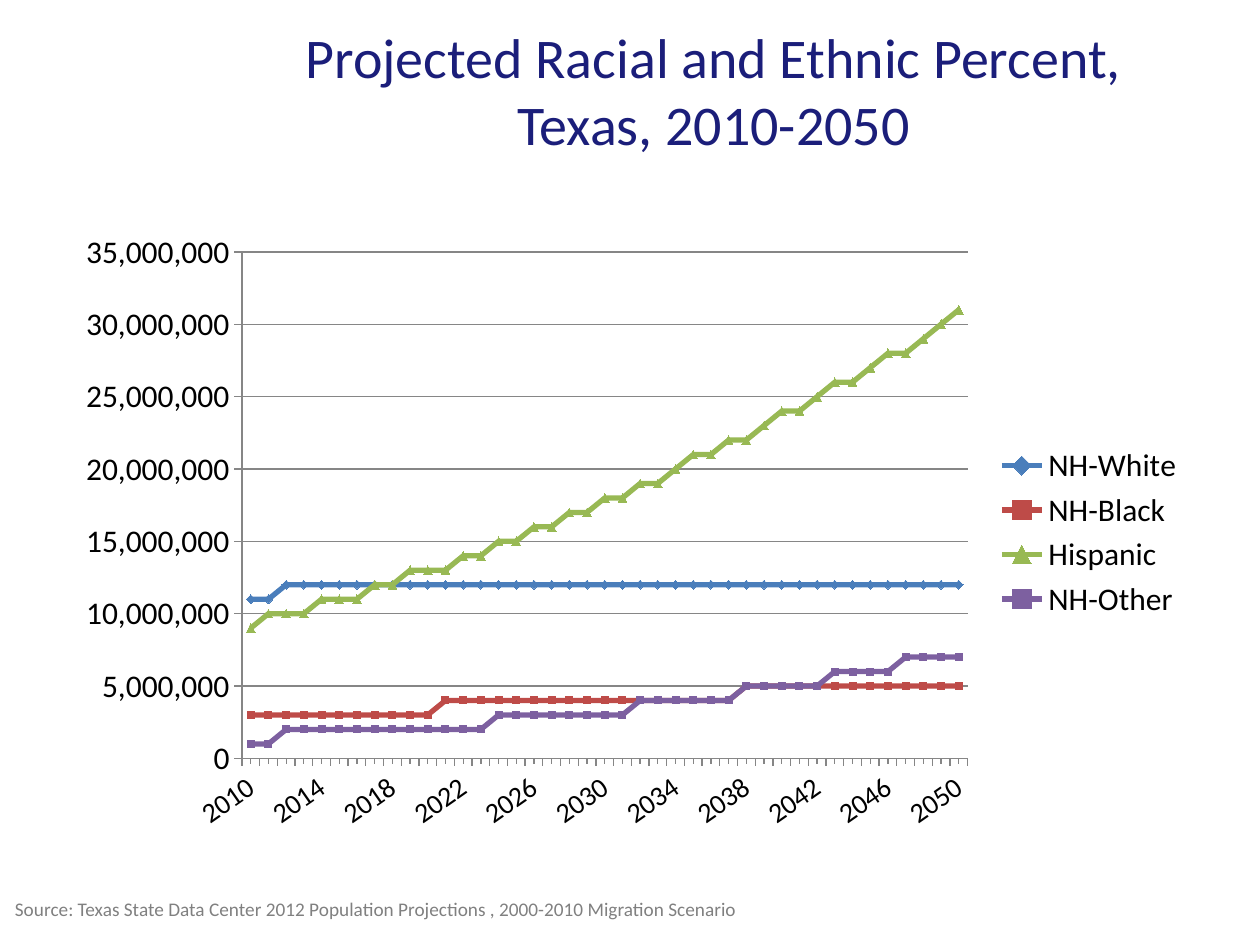
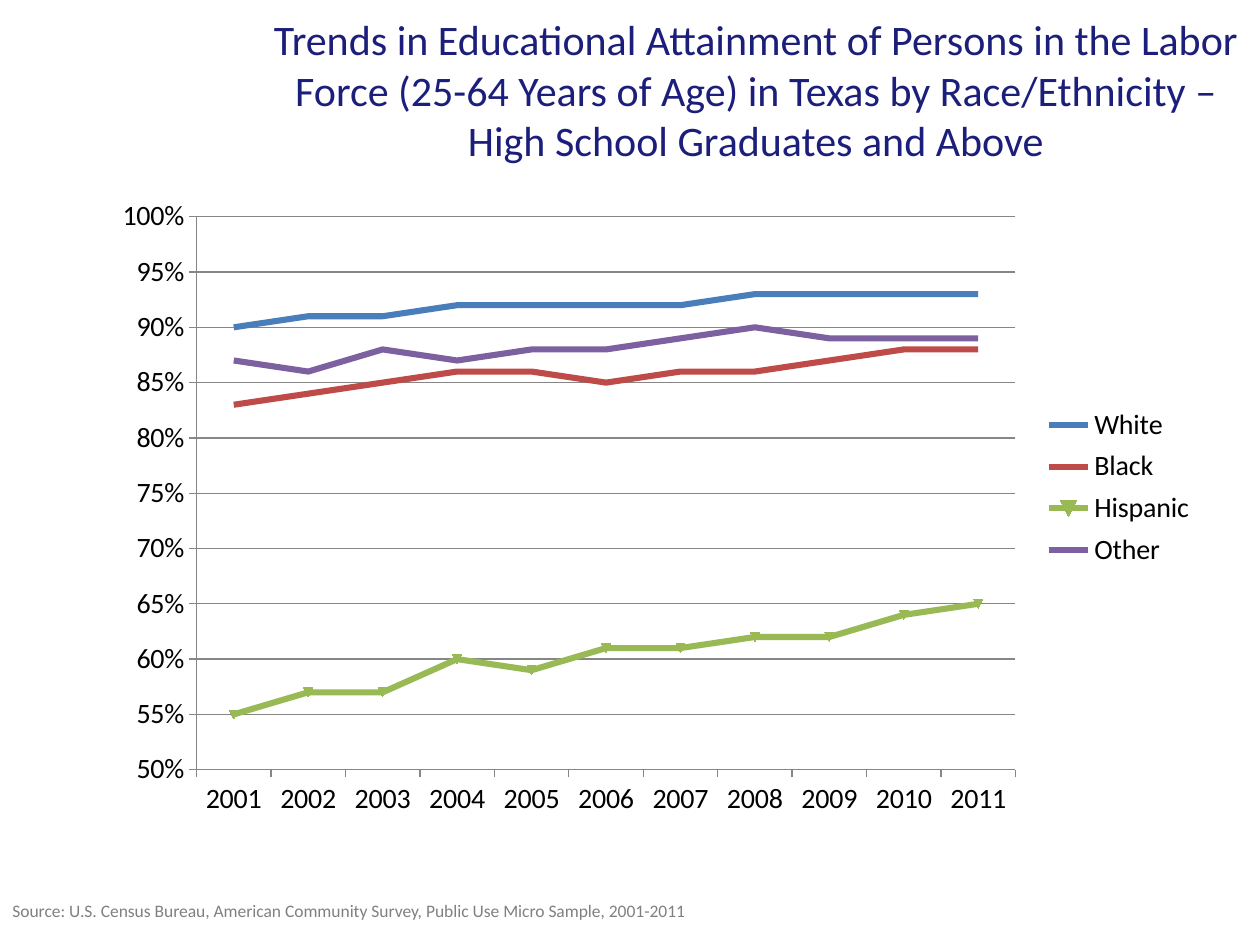
from lxml import etree
from pptx import Presentation
from pptx import util as u
from pptx.chart.data import CategoryChartData
from pptx.dml.color import RGBColor
from pptx.enum import chart as charts, text
from pptx.oxml import ns

FONT = "Calibri"
NAVY, GRAY, AXIS_GRAY, BLACK = "1B1E7A", "808080", "868686", "000000"
SERIES_COLORS = ["4A7EBB", "BE4B48", "98B954", "7D60A0"]
MARKER, TICK = charts.XL_MARKER_STYLE, charts.XL_TICK_MARK

# Population in whole millions, one value for each year
population = {
    "NH-White": [11] * 2 + [12] * 39,
    "NH-Black": [3] * 11 + [4] * 17 + [5] * 13,
    "Hispanic": [
        9, 10, 10, 10, 11, 11, 11, 12, 12, 13, 13, 13, 14, 14, 15, 15, 16, 16, 17, 17, 18,
        18, 19, 19, 20, 21, 21, 22, 22, 23, 24, 24, 25, 26, 26, 27, 28, 28, 29, 30, 31],
    "NH-Other": [1] * 2 + [2] * 12 + [3] * 8 + [4] * 6 + [5] * 5 + [6] * 4 + [7] * 4,
}
# Percent with high school or above
attainment = {
    "White": [90, 91, 91, 92, 92, 92, 92, 93, 93, 93, 93],
    "Black": [83, 84, 85, 86, 86, 85, 86, 86, 87, 88, 88],
    "Hispanic": [55, 57, 57, 60, 59, 61, 61, 62, 62, 64, 65],
    "Other": [87, 86, 88, 87, 88, 88, 89, 90, 89, 89, 89],
}

# Boxes, plot areas and legends are left, top, width, height in slide inches
pages = [
    dict(title="Projected Racial and Ethnic Percent, Texas, 2010-2050",
         title_box=(1.75, 0.17, 7.83, 1.08), title_size=32,
         source="Source: Texas State Data Center 2012 Population Projections , "
                "2000-2010 Migration Scenario",
         source_box=(0.02, 7.07, 6, 0.29), source_size=11,
         kind=charts.XL_CHART_TYPE.LINE_MARKERS, chart_box=(0.5, 1.75, 9, 4.95),
         plot_box=(1.92, 2, 5.76, 4.02), legend_box=None, chart_size=18, year_size=16,
         year_angle=-35, minor_tick=TICK.OUTSIDE, line_width=3,
         years=range(2010, 2051), data=population, factor=1_000_000,
         number_format="#,##0", scale=(0, 35_000_000, 5_000_000),
         markers={"NH-White": (MARKER.DIAMOND, 5), "NH-Black": (MARKER.SQUARE, 4),
                  "Hispanic": (MARKER.TRIANGLE, 5), "NH-Other": (MARKER.SQUARE, 4)}),
    dict(title="Trends in Educational Attainment of Persons in the Labor Force "
               "(25-64 Years of Age) in Texas by Race/Ethnicity – "
               "High School Graduates and Above",
         title_box=(2, 0.17, 8, 1.08), title_size=24,
         source="Source: U.S. Census Bureau, American Community Survey, "
                "Public Use Micro Sample, 2001-2011",
         source_box=(0, 7.09, 7, 0.27), source_size=10,
         kind=charts.XL_CHART_TYPE.LINE, chart_box=(0.8, 1.49, 8.79, 5.09),
         plot_box=(1.56, 1.72, 6.5, 4.39), legend_box=(8.26, 3.18, 1.24, 1.38),
         chart_size=16, year_size=16, year_angle=0, minor_tick=TICK.NONE, line_width=3.5,
         years=range(2001, 2012), data=attainment, factor=0.01,
         number_format="0%", scale=(0.5, 1, 0.05),
         markers={"Hispanic": (MARKER.AUTOMATIC, 5)}),
]


def color(hex_code):
    return RGBColor.from_string(hex_code)


def add_text(slide, box_inches, words, size, hex_code, align, anchor):
    box = slide.shapes.add_textbox(*map(u.Inches, box_inches))
    frame = box.text_frame
    frame.word_wrap = True
    frame.vertical_anchor = anchor
    frame.text = words
    para = frame.paragraphs[0]
    para.alignment = align
    font = para.runs[0].font
    font.name, font.size, font.color.rgb = FONT, u.Pt(size), color(hex_code)


deck = Presentation()
deck.slide_width, deck.slide_height = u.Inches(10), u.Inches(7.5)

for page in pages:
    slide = deck.slides.add_slide(deck.slide_layouts[6])
    add_text(slide, page["title_box"], page["title"], page["title_size"], NAVY,
             text.PP_ALIGN.CENTER, text.MSO_ANCHOR.MIDDLE)

    chart_data = CategoryChartData(number_format=page["number_format"])
    chart_data.categories = [str(year) for year in page["years"]]
    for name, values in page["data"].items():
        chart_data.add_series(name, [round(value * page["factor"], 2) for value in values])
    chart = slide.shapes.add_chart(
        page["kind"], *map(u.Inches, page["chart_box"]), chart_data).chart
    chart.has_title = False
    chart.font.name, chart.font.size = FONT, u.Pt(page["chart_size"])
    chart.font.color.rgb = color(BLACK)
    chart.has_legend = True
    chart.legend.position = charts.XL_LEGEND_POSITION.RIGHT
    chart.legend.include_in_layout = False

    value_axis, year_axis = chart.value_axis, chart.category_axis
    value_axis.minimum_scale, value_axis.maximum_scale, value_axis.major_unit = page["scale"]
    value_axis.tick_labels.number_format = page["number_format"]
    value_axis.tick_labels.number_format_is_linked = False
    value_axis.has_major_gridlines = True
    year_axis.has_major_gridlines = False
    year_axis.tick_labels.font.size = u.Pt(page["year_size"])
    if page["year_angle"]:
        label_body = year_axis._element.find(ns.qn("c:txPr")).find(ns.qn("a:bodyPr"))
        label_body.set("rot", str(page["year_angle"] * 60000))
    for axis in (value_axis, year_axis):
        axis.major_tick_mark = TICK.OUTSIDE
    value_axis.minor_tick_mark = TICK.NONE
    year_axis.minor_tick_mark = page["minor_tick"]
    for line in (value_axis.format.line, year_axis.format.line,
                 value_axis.major_gridlines.format.line):
        line.color.rgb, line.width = color(AXIS_GRAY), u.Pt(0.75)

    plot = chart.plots[0]
    plot.vary_by_categories = False
    for series, hex_code in zip(plot.series, SERIES_COLORS):
        series.smooth = False
        series.format.line.color.rgb = color(hex_code)
        series.format.line.width = u.Pt(page["line_width"])
        style, size = page["markers"].get(series.name, (MARKER.NONE, None))
        series.marker.style = style
        if size:
            series.marker.size = size
            series.marker.format.fill.solid()
            series.marker.format.fill.fore_color.rgb = color(hex_code)
            series.marker.format.line.color.rgb = color(hex_code)

    # Fix the plot area and legend as fractions of the chart frame
    left, top, width, height = page["chart_box"]
    plot_area = chart._chartSpace.chart.plotArea
    legend = chart.legend._element
    for part, part_box, index in ((plot_area, page["plot_box"], 0),
                                  (legend, page["legend_box"], 1)):
        if part_box is None:
            continue
        part_left, part_top, part_width, part_height = part_box
        settings = dict(xMode="edge", yMode="edge",
                        x=(part_left - left) / width, y=(part_top - top) / height,
                        w=part_width / width, h=part_height / height)
        if part is plot_area:
            settings = dict(layoutTarget="inner", **settings)
        for old_layout in part.findall(ns.qn("c:layout")):
            part.remove(old_layout)
        layout = etree.Element(ns.qn("c:layout"))
        part.insert(index, layout)
        manual = etree.SubElement(layout, ns.qn("c:manualLayout"))
        for tag, value in settings.items():
            etree.SubElement(manual, ns.qn(f"c:{tag}")).set("val", str(value))

    add_text(slide, page["source_box"], page["source"], page["source_size"], GRAY,
             text.PP_ALIGN.LEFT, text.MSO_ANCHOR.TOP)

deck.save("out.pptx")
